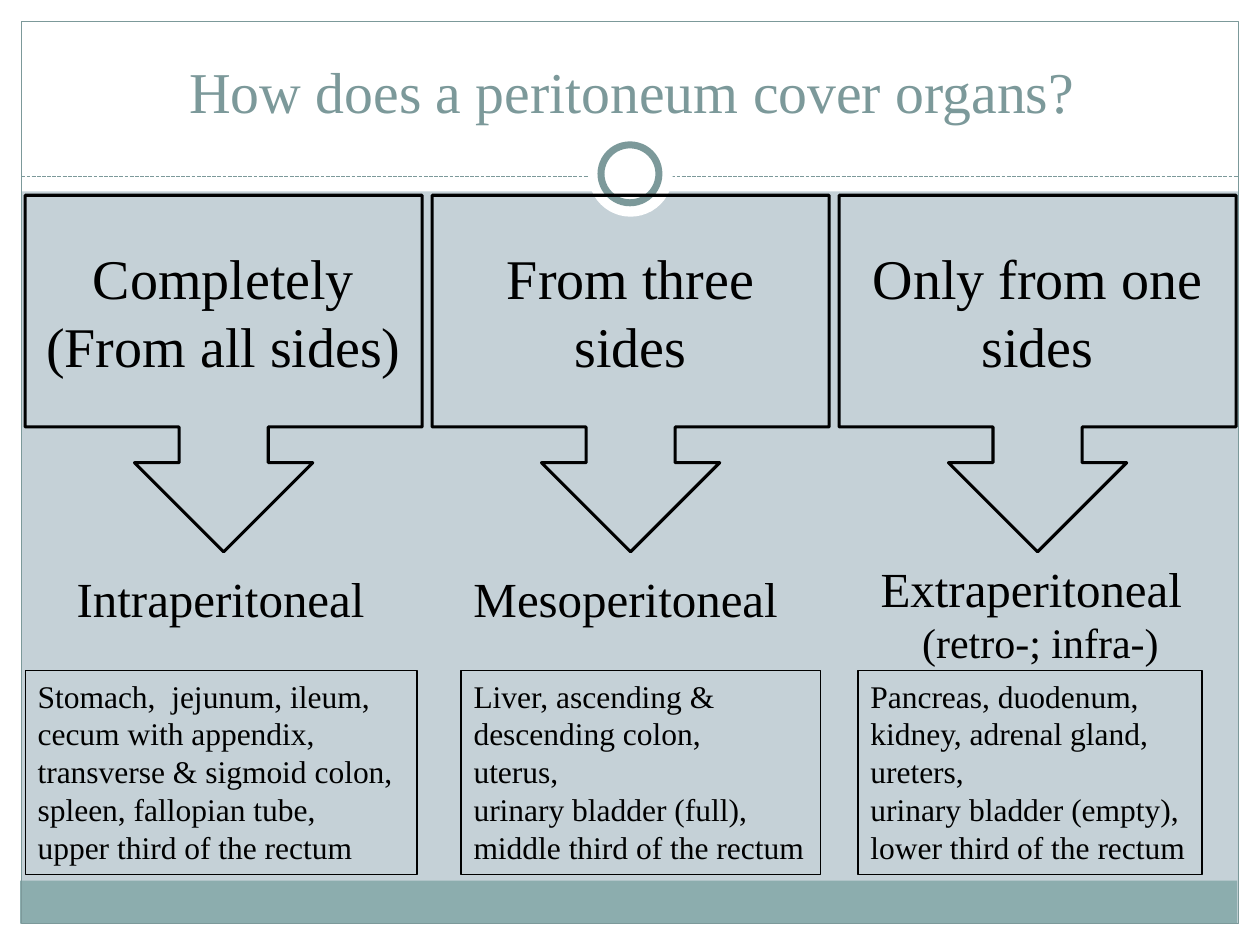
from dataclasses import dataclass

from lxml import etree
from pptx import Presentation
from pptx.dml.color import RGBColor
from pptx.enum.dml import MSO_LINE
from pptx.enum.shapes import MSO_CONNECTOR, MSO_SHAPE
from pptx.enum.text import MSO_ANCHOR, MSO_AUTO_SIZE, PP_ALIGN
from pptx.oxml.ns import qn
from pptx.util import Inches, Pt

RECTANGLE, OVAL = MSO_SHAPE.RECTANGLE, MSO_SHAPE.OVAL
CALLOUT = MSO_SHAPE.DOWN_ARROW_CALLOUT
LEFT, CENTER = PP_ALIGN.LEFT, PP_ALIGN.CENTER
TOP, MIDDLE, BOTTOM = MSO_ANCHOR.TOP, MSO_ANCHOR.MIDDLE, MSO_ANCHOR.BOTTOM
NO_AUTOFIT = MSO_AUTO_SIZE.NONE
TITLE_ONLY_LAYOUT = 5


@dataclass(frozen=True)
class Theme:
    font: str = "Times New Roman"
    background: RGBColor = RGBColor(0xC5, 0xD1, 0xD7)
    paper: RGBColor = RGBColor(0xFF, 0xFF, 0xFF)
    accent: RGBColor = RGBColor(0x7C, 0x99, 0x9A)
    footer: RGBColor = RGBColor(0x8C, 0xAD, 0xAE)
    ink: RGBColor = RGBColor(0, 0, 0)
    title_size: float = 33
    callout_size: float = 32
    term_size: float = 28
    note_size: float = 24
    organ_size: float = 18


THEME = Theme()
WIDTH, HEIGHT, MARGIN = 10, 7.5, 0.17

# Callout text, term, note, term box, organs box, organs
COLUMNS = [
    ("Completely (From all sides)", "Intraperitoneal", None,
     (0.51, 4.46, 2.51, 0.57), (0.2, 5.32, 3.11, 1.62),
     ["Stomach,  jejunum, ileum,", "cecum with appendix,",
      "transverse & sigmoid colon,", "spleen, fallopian tube,",
      "upper third of the rectum"]),
    ("From three sides", "Mesoperitoneal", None,
     (3.66, 4.46, 2.64, 0.57), (3.66, 5.32, 2.85, 1.62),
     ["Liver, ascending &", "descending colon,", "uterus,",
      "urinary bladder (full),", "middle third of the rectum"]),
    ("Only from one sides", "Extraperitoneal", "(retro-; infra-)",
     (6.89, 4.38, 2.62, 0.98), (6.81, 5.32, 2.73, 1.62),
     ["Pancreas, duodenum,", "kidney, adrenal gland,", "ureters,",
      "urinary bladder (empty),", "lower third of the rectum"]),
]


def set_attributes(target, values):
    for name, value in values.items():
        setattr(target, name, value)


def add_box(slide, kind, box, fill=None, line=None, weight=0.75):
    shape = slide.shapes.add_shape(kind, *map(Inches, box))
    shape.shadow.inherit = False
    if fill is None:
        shape.fill.background()
    else:
        shape.fill.solid()
        shape.fill.fore_color.rgb = fill
    if line is None:
        shape.line.fill.background()
    else:
        shape.line.color.rgb = line
        shape.line.width = Pt(weight)
    return shape


def write_text(shape, lines, size, color=THEME.ink, align=LEFT, anchor=TOP, wrap=False):
    frame = shape.text_frame
    set_attributes(frame, {"text": "\n".join(lines), "word_wrap": wrap,
                           "auto_size": NO_AUTOFIT, "vertical_anchor": anchor})
    for paragraph in frame.paragraphs:
        paragraph.alignment = align
        set_attributes(paragraph.font, {"name": THEME.font, "size": Pt(size)})
        paragraph.font.color.rgb = color
    return frame


def add_frame(slide):
    # White margins and header band
    for box in [(0, HEIGHT - MARGIN, WIDTH, MARGIN), (0, 0, WIDTH, 1.52),
                (0, 0, MARGIN, HEIGHT), (WIDTH - MARGIN, 0, MARGIN, HEIGHT)]:
        add_box(slide, RECTANGLE, box, THEME.paper)

    # Footer band and border
    inner_width = WIDTH - 2 * MARGIN
    add_box(slide, RECTANGLE, (0.16, 6.99, inner_width, 0.34), THEME.footer)
    add_box(slide, RECTANGLE, (MARGIN, MARGIN, inner_width, HEIGHT - 2 * MARGIN),
            line=THEME.accent)

    # Dashed divider with its ring
    divider = slide.shapes.add_connector(
        MSO_CONNECTOR.STRAIGHT, Inches(MARGIN), Inches(1.4),
        Inches(WIDTH - MARGIN), Inches(1.4))
    set_attributes(divider.line, {"width": Pt(0.75), "dash_style": MSO_LINE.SQUARE_DOT})
    divider.line.color.rgb = THEME.accent
    etree.SubElement(divider._element.spPr, qn("a:effectLst"))
    add_box(slide, OVAL, (4.67, 1.05, 0.67, 0.67), THEME.paper)
    add_box(slide, OVAL, (4.77, 1.15, 0.46, 0.46), THEME.paper, THEME.accent, 4)


def add_title(slide, text, box):
    title = slide.shapes.title
    names = ("left", "top", "width", "height")
    set_attributes(title, dict(zip(names, map(Inches, box))))
    write_text(title, [text], THEME.title_size, THEME.accent, CENTER, BOTTOM, wrap=True)
    # Bring the title in front of the header band
    slide.shapes._spTree.append(title._element)


def add_callout(slide, text, box):
    callout = add_box(slide, CALLOUT, box, line=THEME.ink, weight=1.75)
    write_text(callout, [text], THEME.callout_size, align=CENTER, anchor=MIDDLE, wrap=True)


def add_term(slide, term, note, box):
    text_box = slide.shapes.add_textbox(*map(Inches, box))
    lines = [term, note] if note else [term]
    frame = write_text(text_box, lines, THEME.term_size)
    if note:
        paragraph = frame.paragraphs[1]
        paragraph.font.size = Pt(THEME.note_size)
        paragraph._p.get_or_add_pPr().set("marL", str(Inches(0.33)))


def add_organs(slide, organs, box):
    panel = add_box(slide, RECTANGLE, box, line=THEME.ink)
    write_text(panel, organs, THEME.organ_size)


def main():
    presentation = Presentation()
    set_attributes(presentation, {"slide_width": Inches(WIDTH),
                                  "slide_height": Inches(HEIGHT)})
    slide = presentation.slides.add_slide(presentation.slide_layouts[TITLE_ONLY_LAYOUT])
    slide.background.fill.solid()
    slide.background.fill.fore_color.rgb = THEME.background

    add_frame(slide)
    add_title(slide, "How does a peritoneum cover organs?", (0.35, 0.21, 9.33, 0.83))
    for index, (cover, term, note, term_box, organ_box, organs) in enumerate(COLUMNS):
        add_callout(slide, cover, (0.2 + index * 3.23, 1.55, 3.15, 2.83))
        add_term(slide, term, note, term_box)
        add_organs(slide, organs, organ_box)

    presentation.save("out.pptx")


if __name__ == "__main__":
    main()
